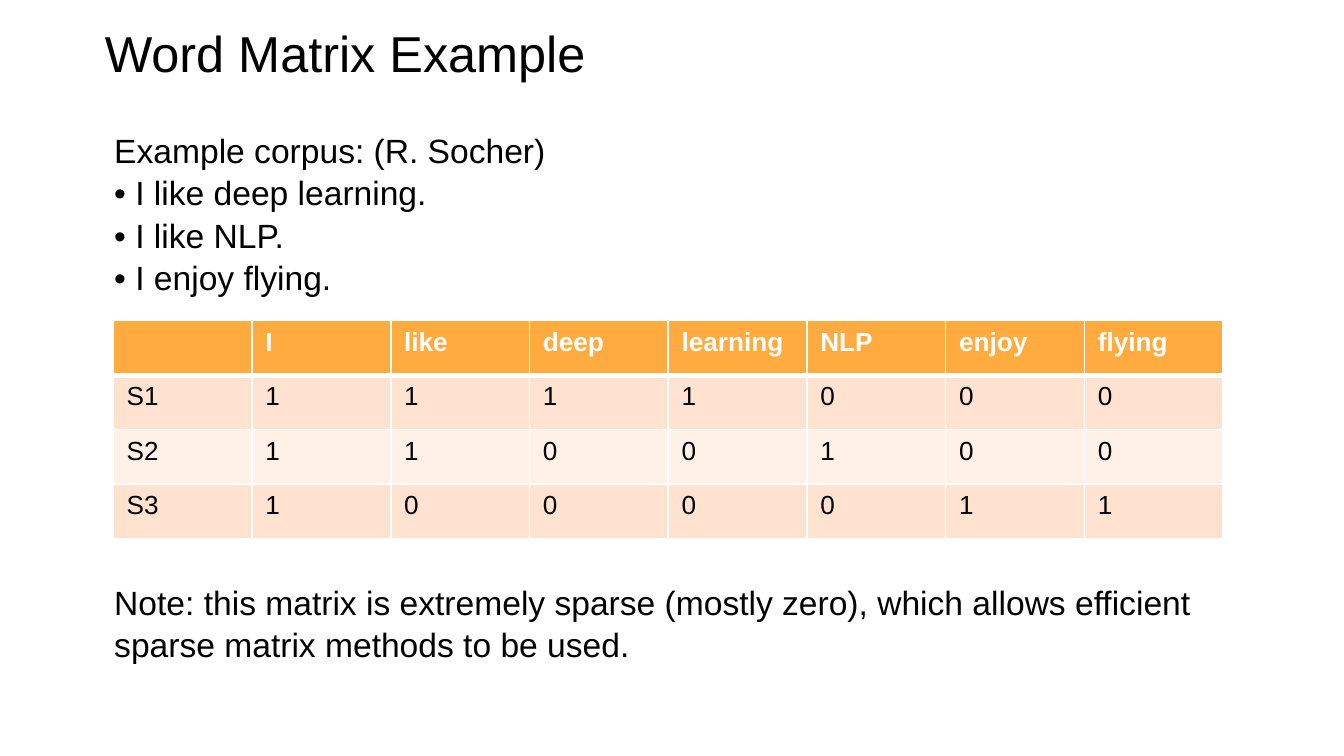
import lxml.etree
import pptx
import pptx.dml.color
import pptx.enum.text
import pptx.oxml.ns
import pptx.util

Cm = pptx.util.Cm
Pt = pptx.util.Pt

COLORS = {
    "text": "000000",
    "white": "FFFFFF",
    "header": "FFAB40",
    "band_dark": "FFE2CF",
    "band_light": "FFF1E8",
}
FONT = "Arial"
CORPUS = [
    "Example corpus: (R. Socher)",
    "• I like deep learning.",
    "• I like NLP.",
    "• I enjoy flying.",
]
NOTE = (
    "Note: this matrix is extremely sparse (mostly zero), "
    "which allows efficient sparse matrix methods to be used."
)
MATRIX = [
    ["", "I", "like", "deep", "learning", "NLP", "enjoy", "flying"],
    ["S1", "1", "1", "1", "1", "0", "0", "0"],
    ["S2", "1", "1", "0", "0", "1", "0", "0"],
    ["S3", "1", "0", "0", "0", "0", "1", "1"],
]


def rgb(name):
    """Return the named deck color."""
    return pptx.dml.color.RGBColor.from_string(COLORS[name])


def add_span(para, text, size, color="text", bold=False):
    """Add one formatted run to a paragraph."""
    span = para.add_run()
    span.text = text
    span.font.name = FONT
    span.font.size = Pt(size)
    span.font.bold = bold
    span.font.color.rgb = rgb(color)


def prepare_frame(frame):
    """Give a text frame its margins, wrapping and top anchor."""
    frame.word_wrap = True
    frame.auto_size = pptx.enum.text.MSO_AUTO_SIZE.NONE
    frame.vertical_anchor = pptx.enum.text.MSO_ANCHOR.TOP
    frame.margin_left = frame.margin_right = Cm(0.18)
    frame.margin_top = frame.margin_bottom = Cm(0.18)


def place_title(page, left, top, width, height):
    """Move and fill the title placeholder."""
    title = page.shapes.title
    title.left, title.top, title.width, title.height = left, top, width, height
    prepare_frame(title.text_frame)
    para = title.text_frame.paragraphs[0]
    para.alignment = pptx.enum.text.PP_ALIGN.LEFT
    add_span(para, "Word Matrix Example", 27)


def place_body(page, left, top, width, height):
    """Write the corpus and, below the room for the table, the note."""
    frame = page.shapes.add_textbox(left, top, width, height).text_frame
    prepare_frame(frame)
    for index, text in enumerate(CORPUS + [NOTE]):
        para = frame.add_paragraph() if index else frame.paragraphs[0]
        para.line_spacing = 1.05
        add_span(para, text, 18)
    para.space_before = Pt(151.5)


def set_borders(cell, top, bottom):
    """Draw white cell borders with the given top and bottom widths."""
    properties = cell._tc.get_or_add_tcPr()
    widths = {"lnL": 1, "lnR": 1, "lnT": top, "lnB": bottom}
    for index, (side, width) in enumerate(widths.items()):
        line = lxml.etree.Element(pptx.oxml.ns.qn(f"a:{side}"), w=str(Pt(width)))
        fill = lxml.etree.SubElement(line, pptx.oxml.ns.qn("a:solidFill"))
        lxml.etree.SubElement(fill, pptx.oxml.ns.qn("a:srgbClr"), val=COLORS["white"])
        properties.insert(index, line)


def place_matrix(page, left, top, width, height):
    """Build the word matrix with equal rows and columns."""
    rows, columns = len(MATRIX), len(MATRIX[0])
    table = page.shapes.add_table(rows, columns, left, top, width, height).table
    fills = ["header", "band_dark", "band_light", "band_dark"]
    for row, values in enumerate(MATRIX):
        is_header = row == 0
        for column, value in enumerate(values):
            cell = table.cell(row, column)
            cell.fill.solid()
            cell.fill.fore_color.rgb = rgb(fills[row])
            set_borders(cell, 3 if row == 1 else 1, 3 if is_header else 1)
            if value:
                color = "white" if is_header else "text"
                add_span(cell.text_frame.paragraphs[0], value, 14, color, is_header)


def main():
    """Build and save the deck."""
    deck = pptx.Presentation()
    deck.slide_width, deck.slide_height = Cm(25.4), Cm(14.29)
    page = deck.slides.add_slide(deck.slide_layouts[5])
    place_title(page, Cm(1.8), Cm(0.23), Cm(20.68), Cm(2.18))
    place_body(page, Cm(1.98), Cm(2.24), Cm(20.98), Cm(9.3))
    place_matrix(page, Cm(2.14), Cm(6.06), Cm(20.98), Cm(4.12))
    deck.save("out.pptx")


if __name__ == "__main__":
    main()
